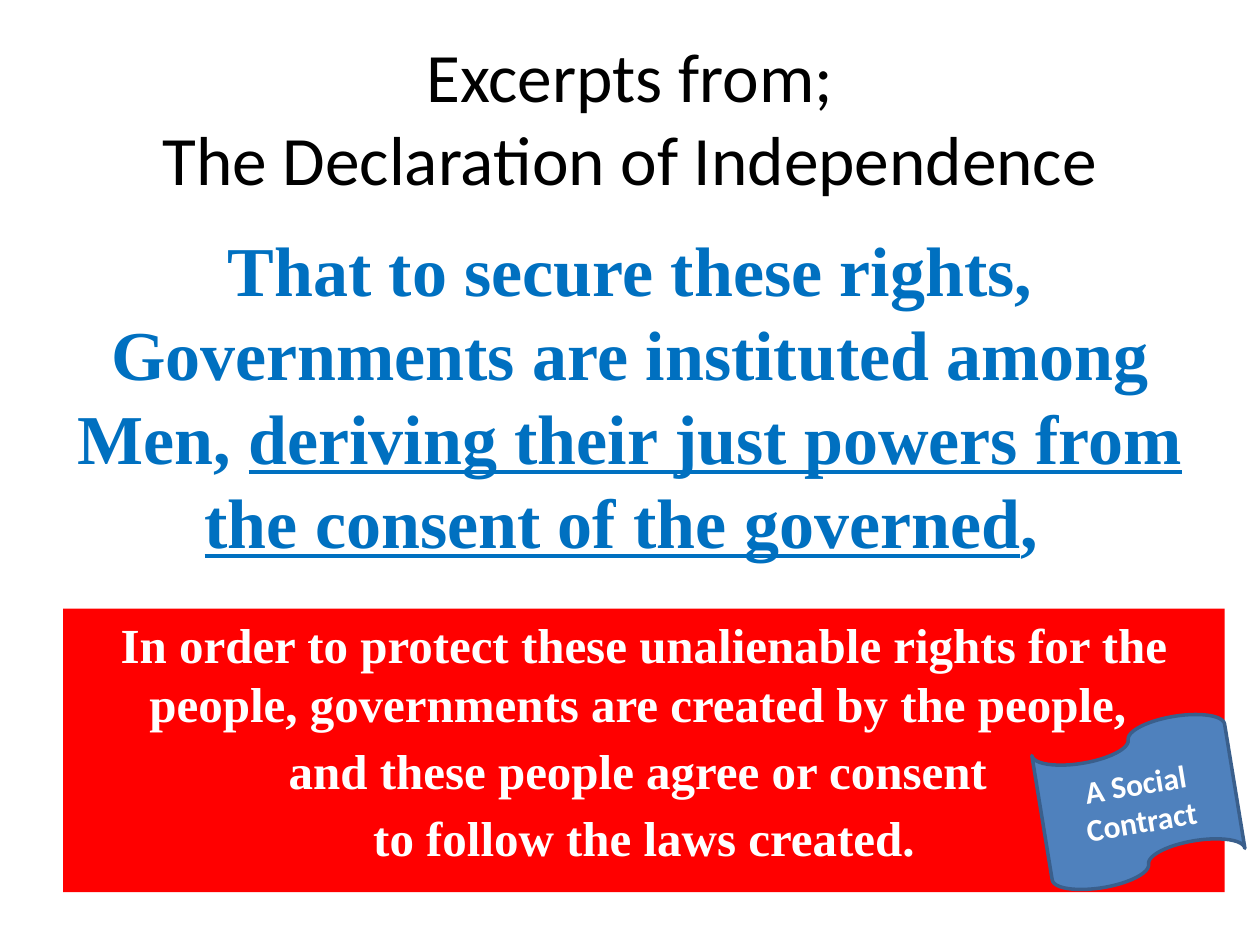
from pptx import Presentation
from pptx.dml.color import RGBColor
from pptx.enum.shapes import MSO_SHAPE
from pptx.enum.text import MSO_ANCHOR, PP_ALIGN
from pptx.util import Inches, Pt

COLORS = {
    "black": "000000",
    "white": "FFFFFF",
    "quote": "0070C0",
    "panel": "FF0000",
    "tape": "4F81BD",
    "tape_line": "3A5F8C",
}
SERIF = "Times New Roman"
SANS = "Calibri"


def rgb(name):
    return RGBColor.from_string(COLORS[name])


def write_text(sp, paragraphs, size, font, color, bold=False, before=0,
               anchor=MSO_ANCHOR.TOP):
    """Fill a shape with paragraphs, each a list of (text, underline) runs."""
    tf = sp.text_frame
    tf.word_wrap = True
    tf.vertical_anchor = anchor
    for i, runs in enumerate(paragraphs):
        p = tf.add_paragraph() if i else tf.paragraphs[0]
        p.alignment = PP_ALIGN.CENTER
        p.space_before = Pt(before)
        for text, underline in runs:
            for j, line in enumerate(text.split("\n")):
                if j:
                    p.add_line_break()
                r = p.add_run()
                r.text = line
                r.font.size = Pt(size)
                r.font.name = font
                r.font.bold = bold
                r.font.underline = underline
                r.font.color.rgb = rgb(color)


def add_text(s, box, paragraphs, **fmt):
    sp = s.shapes.add_textbox(*map(Inches, box))
    write_text(sp, paragraphs, **fmt)


def add_panel(s, kind, box, fill, paragraphs, line=None, rotation=0, **fmt):
    sp = s.shapes.add_shape(kind, *map(Inches, box))
    sp.shadow.inherit = False
    sp.rotation = rotation
    sp.fill.solid()
    sp.fill.fore_color.rgb = rgb(fill)
    if line:
        sp.line.color.rgb = rgb(line)
        sp.line.width = Pt(2)
    else:
        sp.line.fill.background()
    write_text(sp, paragraphs, **fmt)


def main():
    prs = Presentation()
    prs.slide_width, prs.slide_height = Inches(10), Inches(7.5)
    s = prs.slides.add_slide(prs.slide_layouts[6])

    add_text(s, (0.5, 0.3, 9, 1.25),
             [[("Excerpts from;\nThe Declaration of Independence", False)]],
             size=39.6, font=SANS, color="black", anchor=MSO_ANCHOR.MIDDLE)

    quote = [
        ("That to secure these rights, Governments are instituted among Men, ", False),
        ("deriving their just powers from the consent of the governed", True),
        (", ", False),
    ]
    add_text(s, (0.5, 1.75, 9, 4.95), [quote],
             size=40, font=SERIF, color="quote", bold=True, before=4.5)

    meaning = [
        "In order to protect these unalienable rights for the people, "
        "governments are created by the people, ",
        "and these people agree or consent ",
        "to follow the laws created.",
    ]
    add_panel(s, MSO_SHAPE.RECTANGLE, (0.5, 4.83, 9.22, 2.25), "panel",
              [[(text, False)] for text in meaning],
              size=28, font=SERIF, color="white", bold=True, before=4.5)

    add_panel(s, MSO_SHAPE.FLOWCHART_PUNCHED_TAPE, (8.26, 5.74, 1.55, 1.25),
              "tape", [[("A Social Contract", False)]],
              line="tape_line", rotation=350.7, size=18, font=SANS,
              color="white", bold=True, anchor=MSO_ANCHOR.MIDDLE)

    prs.save("out.pptx")


if __name__ == "__main__":
    main()
